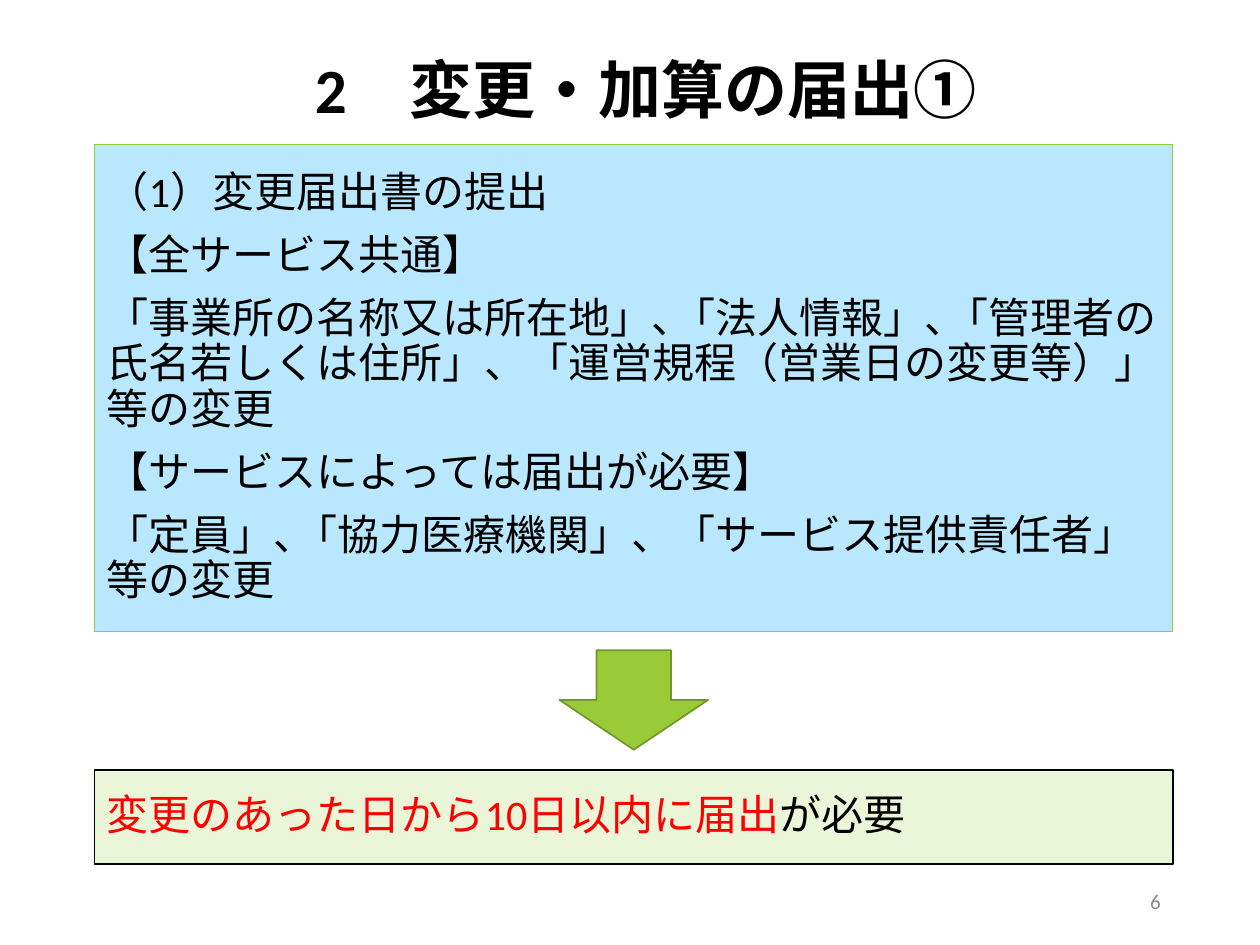
from pptx import Presentation
from pptx.dml.color import RGBColor
from pptx.enum import shapes, text
from pptx.util import Inches, Pt

BLACK = RGBColor(0x00, 0x00, 0x00)
RED = RGBColor(0xFF, 0x00, 0x00)
GRAY = RGBColor(0x8C, 0x8C, 0x8C)
SKY = RGBColor(0xB9, 0xE7, 0xFD)
PALE_GREEN = RGBColor(0xEB, 0xF5, 0xD7)
GREEN = RGBColor(0x99, 0xCB, 0x38)
DARK_GREEN = RGBColor(0x71, 0x96, 0x29)

FONT = "Calibri"
LEFT, WIDTH = 0.75, 8.56
ARROW_WIDTH = 1.18

# Each paragraph is a list of (text, colour) runs.
TITLE = [[("2　変更・加算の届出①", BLACK)]]
CHANGES = [[(line, BLACK)] for line in (
    "（1）変更届出書の提出",
    "【全サービス共通】",
    "「事業所の名称又は所在地」､「法人情報」､「管理者の氏名若しくは住所」、"
    "「運営規程（営業日の変更等）」等の変更",
    "【サービスによっては届出が必要】",
    "「定員」､「協力医療機関」、「サービス提供責任者」等の変更",
)]
DEADLINE = [[("変更のあった日から10日以内に届出", RED), ("が必要", BLACK)]]
PAGE_NUMBER = [[("6", GRAY)]]


def add_text(sp, paragraphs, size=24, bold=False, align=text.PP_ALIGN.LEFT,
             line_spacing=0.9, space_before=0):
    tf = sp.text_frame
    tf.word_wrap = True
    tf.vertical_anchor = text.MSO_ANCHOR.MIDDLE
    for i, runs in enumerate(paragraphs):
        p = tf.add_paragraph() if i else tf.paragraphs[0]
        p.alignment = align
        p.line_spacing = line_spacing
        p.space_before = Pt(space_before)
        for content, color in runs:
            r = p.add_run()
            r.text = content
            r.font.name = FONT
            r.font.size = Pt(size)
            r.font.bold = bold
            r.font.color.rgb = color


def add_filled(slide, kind, box, fill, line, line_width=1):
    sp = slide.shapes.add_shape(kind, *map(Inches, box))
    sp.shadow.inherit = False
    sp.fill.solid()
    sp.fill.fore_color.rgb = fill
    sp.line.color.rgb = line
    sp.line.width = Pt(line_width)
    return sp


def main():
    prs = Presentation()
    prs.slide_width, prs.slide_height = Inches(10), Inches(7.5)
    slide = prs.slides.add_slide(prs.slide_layouts[6])
    rect = shapes.MSO_SHAPE.RECTANGLE

    changes = add_filled(slide, rect, (LEFT, 1.15, WIDTH, 3.86), SKY, GREEN, 0.5)
    add_text(changes, CHANGES, space_before=10)

    number = slide.shapes.add_textbox(
        *map(Inches, (LEFT + WIDTH - 2.25, 6.95, 2.25, 0.4)))
    add_text(number, PAGE_NUMBER, size=12, align=text.PP_ALIGN.RIGHT, line_spacing=1)

    deadline = add_filled(slide, rect, (LEFT, 6.11, WIDTH, 0.75), PALE_GREEN, BLACK)
    add_text(deadline, DEADLINE)

    arrow_left = LEFT + (WIDTH - ARROW_WIDTH) / 2
    add_filled(slide, shapes.MSO_SHAPE.DOWN_ARROW,
               (arrow_left, 5.16, ARROW_WIDTH, 0.79), GREEN, DARK_GREEN)

    title = slide.shapes.add_textbox(*map(Inches, (LEFT, 0.33, 8.75, 0.82)))
    add_text(title, TITLE, size=36, bold=True, align=text.PP_ALIGN.CENTER)

    prs.save("out.pptx")


if __name__ == "__main__":
    main()
